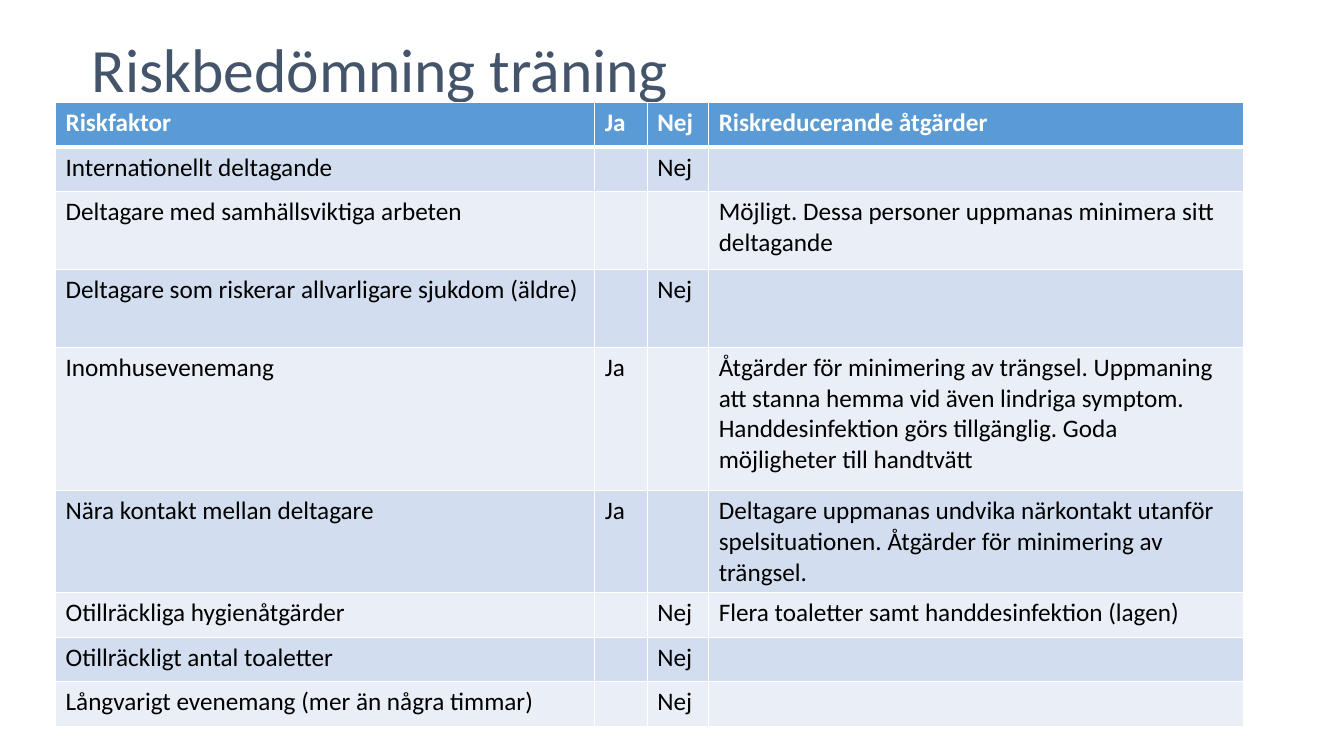
from dataclasses import dataclass

from lxml.etree import SubElement
from pptx import Presentation
from pptx.dml.color import RGBColor as Rgb
from pptx.enum.text import MSO_ANCHOR as Anchor, PP_ALIGN as Align
from pptx.oxml.ns import qn
from pptx.slide import Slide
from pptx.table import _Cell as Cell
from pptx.text.text import _Paragraph as Paragraph
from pptx.util import Cm, Pt

FONT = "Calibri"
COLOURS = {
    "title": "44546A",
    "header": "5B9BD5",
    "odd": "D2DEEF",
    "even": "EAEFF7",
    "text": "000000",
    "white": "FFFFFF",
}
COLUMN_WIDTHS = (13.59, 1.32, 1.55, 13.49)


@dataclass(frozen=True)
class Risk:
    factor: str
    yes: str = ""
    no: str = ""
    measures: str = ""
    height: float = 1.12

    def texts(self) -> tuple[str, ...]:
        return self.factor, self.yes, self.no, self.measures


HEADER = Risk("Riskfaktor", "Ja", "Nej", "Riskreducerande åtgärder")
RISKS = (
    Risk("Internationellt deltagande", no="Nej"),
    Risk("Deltagare med samhällsviktiga arbeten",
         measures="Möjligt. Dessa personer uppmanas minimera sitt deltagande",
         height=1.96),
    Risk("Deltagare som riskerar allvarligare sjukdom (äldre)", no="Nej", height=1.96),
    Risk("Inomhusevenemang", yes="Ja",
         measures="Åtgärder för minimering av trängsel. Uppmaning att stanna hemma "
                  "vid även lindriga symptom. Handdesinfektion görs tillgänglig. "
                  "Goda möjligheter till handtvätt",
         height=3.61),
    Risk("Nära kontakt mellan deltagare", yes="Ja",
         measures="Deltagare uppmanas undvika närkontakt utanför spelsituationen. "
                  "Åtgärder för minimering av trängsel.",
         height=2.58),
    Risk("Otillräckliga hygienåtgärder", no="Nej",
         measures="Flera toaletter samt handdesinfektion (lagen)"),
    Risk("Otillräckligt antal toaletter", no="Nej"),
    Risk("Långvarigt evenemang (mer än några timmar)", no="Nej"),
)


def format_runs(paragraph: Paragraph, size: int, colour: str, bold: bool = False) -> None:
    for run in paragraph.runs:
        run.font.name = FONT
        run.font.size = Pt(size)
        run.font.bold = bold
        run.font.color.rgb = Rgb.from_string(COLOURS[colour])


def set_borders(cell: Cell, top: float, bottom: float) -> None:
    properties = cell._tc.get_or_add_tcPr()
    for side, width in (("L", 1), ("R", 1), ("T", top), ("B", bottom)):
        line = SubElement(properties, qn(f"a:ln{side}"), w=str(Pt(width)))
        fill = SubElement(line, qn("a:solidFill"))
        SubElement(fill, qn("a:srgbClr"), val=COLOURS["white"])


def add_title(slide: Slide, text: str) -> None:
    title = slide.shapes.title
    title.left, title.top, title.width, title.height = Cm(2.06), Cm(0), Cm(29.21), Cm(3.68)
    title.text_frame.text = text
    title.text_frame.vertical_anchor = Anchor.MIDDLE
    heading = title.text_frame.paragraphs[0]
    heading.alignment = Align.LEFT
    heading.line_spacing = 0.9
    format_runs(heading, 44, "title")


def add_risk_table(slide: Slide) -> None:
    rows = (HEADER, *RISKS)
    table = slide.shapes.add_table(
        len(rows), len(COLUMN_WIDTHS), Cm(1.4), Cm(2.59),
        Cm(sum(COLUMN_WIDTHS)), Cm(sum(risk.height for risk in rows)),
    ).table
    for column, width in zip(table.columns, COLUMN_WIDTHS):
        column.width = Cm(width)

    for index, risk in enumerate(rows):
        is_header = index == 0
        band = "header" if is_header else ("even", "odd")[index % 2]
        table.rows[index].height = Cm(risk.height)
        for cell, text in zip(table.rows[index].cells, risk.texts()):
            # A thick rule separates the header from the first risk
            set_borders(cell, top=3 if index == 1 else 1, bottom=3 if is_header else 1)
            cell.fill.solid()
            cell.fill.fore_color.rgb = Rgb.from_string(COLOURS[band])
            if text:
                cell.text_frame.text = text
                format_runs(cell.text_frame.paragraphs[0], 18,
                            "white" if is_header else "text", is_header)


def main() -> None:
    deck = Presentation()
    deck.slide_width, deck.slide_height = Cm(33.87), Cm(19.05)
    slide = deck.slides.add_slide(deck.slide_layouts[5])

    # Heading
    add_title(slide, "Riskbedömning träning")

    # Risk assessment
    add_risk_table(slide)

    deck.save("out.pptx")


if __name__ == "__main__":
    main()
